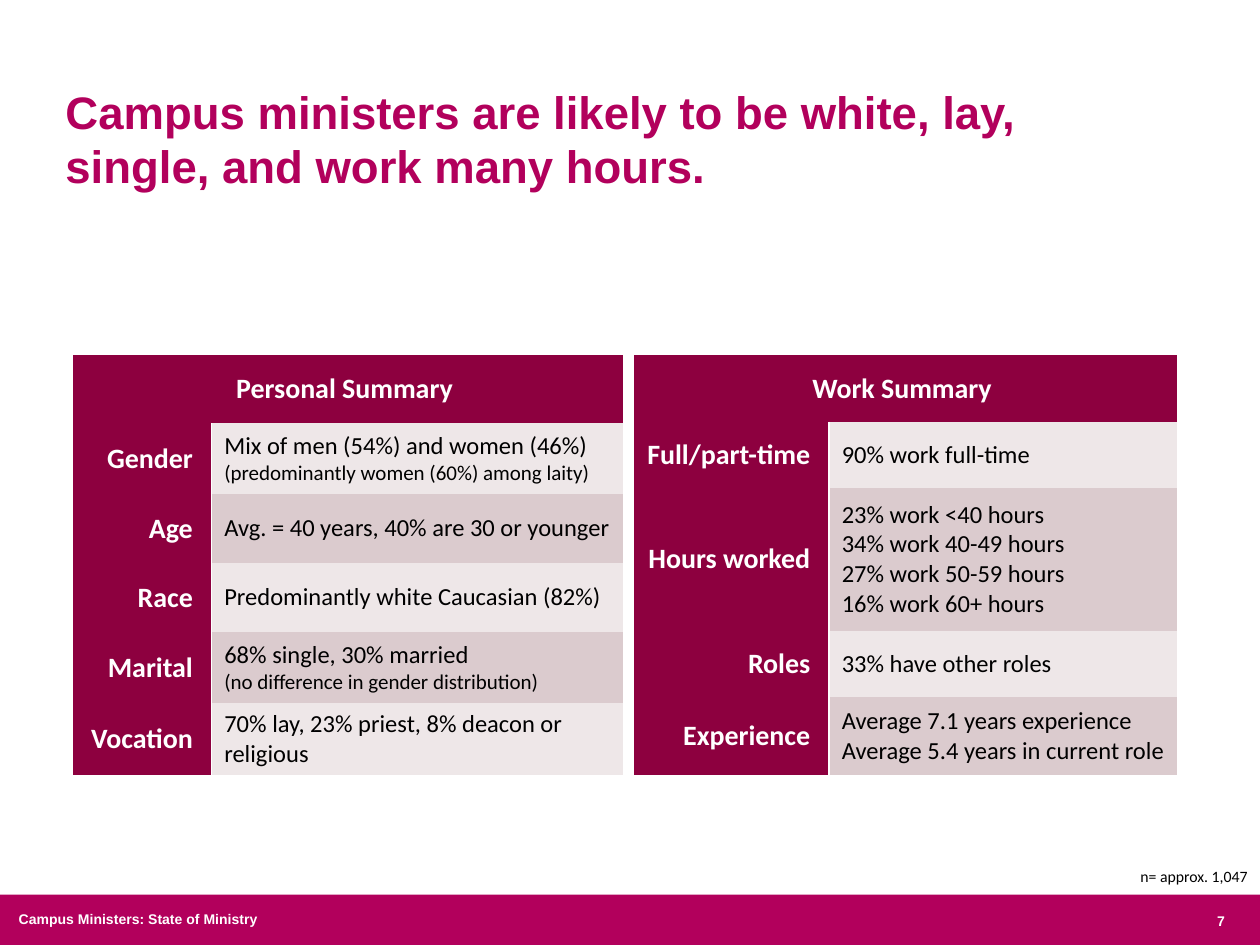
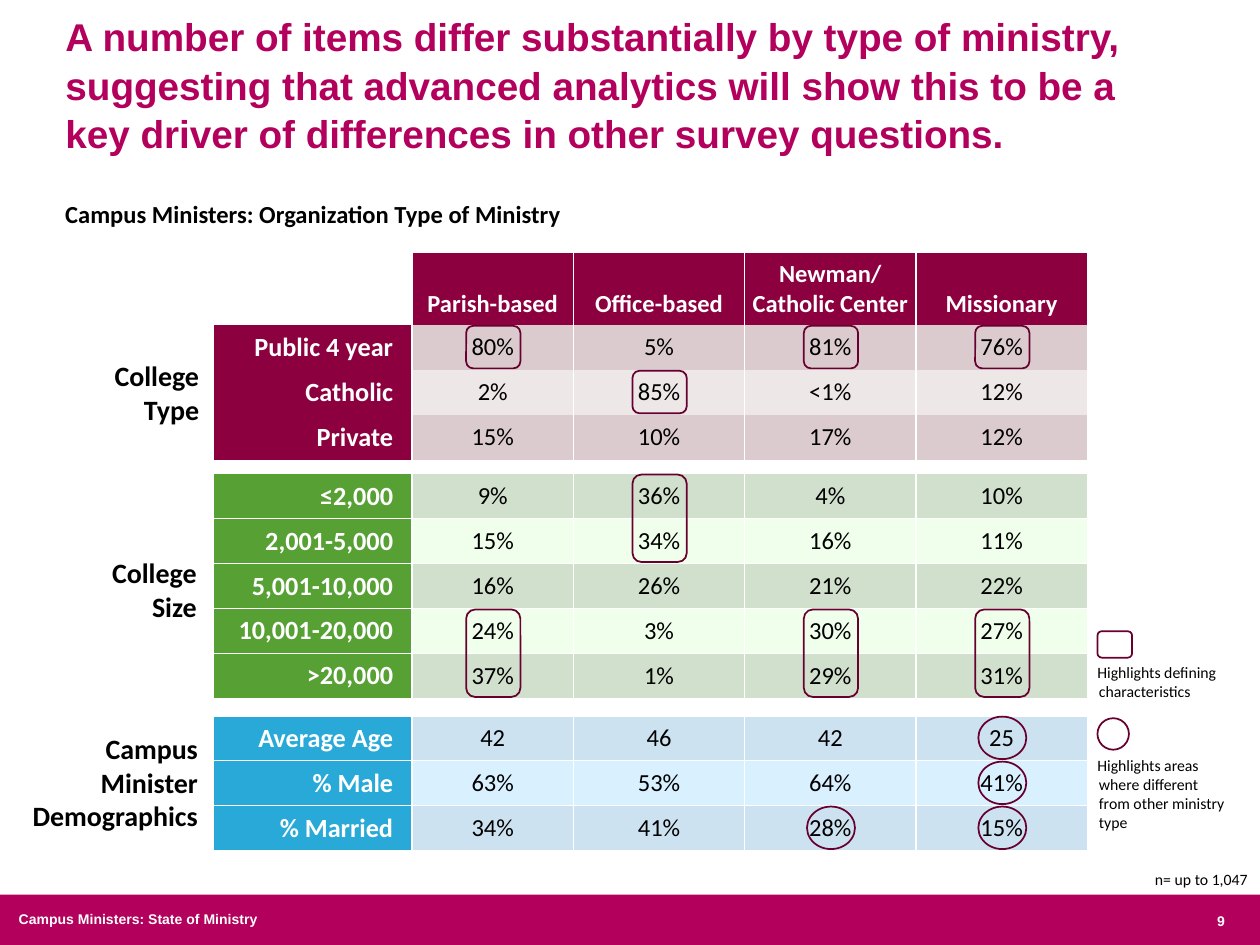
from pptx import Presentation
from pptx.dml.color import RGBColor as RGB
from pptx.enum.shapes import MSO_SHAPE as Kind
from pptx.enum.text import MSO_ANCHOR as Anchor, MSO_AUTO_SIZE as Auto, PP_ALIGN as Align
from pptx.oxml import parse_xml
from pptx.oxml.ns import nsdecls, qn
from pptx.util import Pt

WHITE = RGB(0xFF, 0xFF, 0xFF)
BLACK = RGB(0x00, 0x00, 0x00)
PINK = RGB(0xB2, 0x00, 0x5C)
WINE = RGB(0x8D, 0x00, 0x3F)
PLUM = RGB(0x68, 0x00, 0x2F)
ROSE = RGB(0xDB, 0xCB, 0xCE)
PALE = RGB(0xEE, 0xE7, 0xE8)
GREEN = RGB(0x57, 0xA0, 0x34)
SAGE = RGB(0xD1, 0xDF, 0xCD)
MINT = RGB(0xEF, 0xFF, 0xEB)
BLUE = RGB(0x28, 0xA9, 0xD7)
SKY = RGB(0xCD, 0xE2, 0xF0)
ICE = RGB(0xD9, 0xF0, 0xFF)

BARE = "{2D5ABB26-0587-4C30-8999-92F81FD0307C}"
TITLE = {"name": "Arial", "size": Pt(26), "bold": True}
FOOT = {"name": "Arial", "size": Pt(8), "bold": True}
HEAD = {"name": "Calibri", "size": Pt(16), "bold": True}
SUB = HEAD | {"size": Pt(14)}
LABEL = HEAD | {"size": Pt(15)}
BODY = {"name": "Calibri", "size": Pt(14), "bold": False}
SMALL = BODY | {"size": Pt(12)}
NOTE = BODY | {"size": Pt(9)}
TIGHT = {"margin_left": Pt(3.6), "margin_right": Pt(3.6)}
FLUSH = {"margin_left": 0, "margin_right": 0}
INSET = {"margin_right": Pt(10.8)}

LEFT = 121.7
WIDTHS = (113.8, 92.2, 97.9, 97.9, 97.9)
STEP = 25.7
TOPS = {"type": 144.7, "size": 270.7, "demo": 409}
HIGH = 41

PERSON = (
    ("Gender", "Mix of men (54%) and women (46%)", "(predominantly women (60%) among laity)"),
    ("Age", "Avg. = 40 years, 40% are 30 or younger"),
    ("Race", "Predominantly white Caucasian (82%)"),
    ("Marital", "68% single, 30% married", "(no difference in gender distribution)"),
    ("Vocation", "70% lay, 23% priest, 8% deacon or religious"),
)
WORK = (
    ("Full/part-time", "90% work full-time"),
    ("Hours worked", "23% work <40 hours", "34% work 40-49 hours",
     "27% work 50-59 hours", "16% work 60+ hours"),
    ("Roles", "33% have other roles"),
    ("Experience", "Average 7.1 years experience", "Average 5.4 years in current role"),
)
KINDS = ("Parish-based", "Office-based", "Newman/ Catholic Center", "Missionary")
TYPES = (
    ("Public 4 year", "80%", "5%", "81%", "76%"),
    ("Catholic", "2%", "85%", "<1%", "12%"),
    ("Private", "15%", "10%", "17%", "12%"),
)
SIZES = (
    ("≤2,000", "9%", "36%", "4%", "10%"),
    ("2,001-5,000", "15%", "34%", "16%", "11%"),
    ("5,001-10,000", "16%", "26%", "21%", "22%"),
    ("10,001-20,000", "24%", "3%", "30%", "27%"),
    (">20,000", "37%", "1%", "29%", "31%"),
)
DEMOS = (
    ("Average Age", "42", "46", "42", "25"),
    ("% Male", "63%", "53%", "64%", "41%"),
    ("% Married", "34%", "41%", "28%", "15%"),
)


def apply(item, form):
    for name, value in form.items():
        setattr(item, name, value)


def paint(par, text, form, color, align=Align.LEFT):
    par.text = text
    par.alignment = align
    apply(par.font, form)
    par.font.color.rgb = color


def place(item, box):
    apply(item, dict(zip(("left", "top", "width", "height"), map(Pt, box))))


def write(slide, box, text, form, color=BLACK, align=Align.LEFT, frame={}, hang=0):
    area = slide.shapes.add_textbox(*map(Pt, box)).text_frame
    apply(area, {"word_wrap": True} | frame)
    par = area.paragraphs[0]
    if hang:
        props = par._p.get_or_add_pPr()
        props.set("marL", str(Pt(hang)))
        props.set("indent", str(-Pt(hang)))
    paint(par, text, form, color, align)


def draw(slide, kind, box, fill=None, line=None):
    shape = slide.shapes.add_shape(kind, *map(Pt, box))
    shape.shadow.inherit = False
    if fill:
        shape.fill.solid()
        shape.fill.fore_color.rgb = fill
    else:
        shape.fill.background()
    if line:
        shape.line.color.rgb = line
        shape.line.width = Pt(1)
    else:
        shape.line.fill.background()


def start(deck, number, title, top, form, note, low):
    slide = deck.slides.add_slide(deck.slide_layouts[5])
    draw(slide, Kind.RECTANGLE, (0, 511.2, 720, 28.8), fill=PINK)
    write(slide, (423.4, 517.7, 283.7, 17.3), number, FOOT, WHITE, Align.RIGHT)
    write(slide, (3.6, 517, 283.7, 17.3), "Campus Ministers: State of Ministry", FOOT, WHITE)
    write(slide, (640.8, low, 79.2, 18), note, NOTE, align=Align.RIGHT)
    head = slide.shapes.title
    place(head, (30.2, top, 636.5, 85))
    apply(head.text_frame, {"word_wrap": True, "auto_size": Auto.NONE,
                            "vertical_anchor": Anchor.BOTTOM})
    paint(head.text_frame.paragraphs[0], title, form, PINK)
    return slide


def edge(cell, sides):
    props = cell._tc.get_or_add_tcPr()
    for side in sides:
        props.append(parse_xml(
            f'<a:ln{side} {nsdecls("a")} w="{Pt(1)}"><a:solidFill>'
            f'<a:srgbClr val="{WHITE}"/></a:solidFill></a:ln{side}>'))


def fill_cell(cell, lines, form, ink, fill, align, sides="LR", frame={}):
    edge(cell, sides)
    cell.fill.solid()
    cell.fill.fore_color.rgb = fill
    apply(cell, {"vertical_anchor": Anchor.MIDDLE} | frame)
    area = cell.text_frame
    for i, text in enumerate(lines):
        par = area.add_paragraph() if i else area.paragraphs[0]
        paint(par, text, SMALL if text.startswith("(") else form, ink, align)


def add_grid(slide, left, top, widths, heights):
    frame = slide.shapes.add_table(len(heights), len(widths), Pt(left), Pt(top),
                                   Pt(sum(widths)), Pt(sum(heights)))
    table = frame.table
    apply(table, {"first_row": False, "horz_banding": False})
    table._tbl.tblPr.find(qn("a:tableStyleId")).text = BARE
    for col, width in zip(table.columns, widths):
        col.width = Pt(width)
    for row, height in zip(table.rows, heights):
        row.height = Pt(height)
    return table


def add_facts(slide, left, widths, heights, title, facts):
    table = add_grid(slide, left, 203, widths, heights)
    table.cell(0, 0).merge(table.cell(0, 1))
    fill_cell(table.cell(0, 0), [title], HEAD, WHITE, WINE, Align.CENTER, frame=INSET)
    for i, (label, *lines) in enumerate(facts, 1):
        fill_cell(table.cell(i, 0), [label], HEAD, WHITE, WINE, Align.RIGHT, frame=INSET)
        fill_cell(table.cell(i, 1), lines, BODY, BLACK, PALE if i % 2 else ROSE, Align.LEFT)


def add_rates(slide, top, rates, main, tints, sides="LRTB", heads=()):
    first = [HIGH] if heads else []
    table = add_grid(slide, LEFT, top, WIDTHS, first + [STEP] * len(rates))
    if heads:
        fill_cell(table.cell(0, 0), [], SUB, WHITE, WHITE, Align.CENTER)
    for j, text in enumerate(heads, 1):
        frame = {"vertical_anchor": Anchor.BOTTOM}
        if " " in text:
            frame |= TIGHT
        fill_cell(table.cell(0, j), [text], SUB, WHITE, main, Align.CENTER, frame=frame)
    for i, (label, *values) in enumerate(rates):
        row = i + len(first)
        fill_cell(table.cell(row, 0), [label], LABEL, WHITE, main, Align.RIGHT, sides, INSET)
        for j, value in enumerate(values, 1):
            fill_cell(table.cell(row, j), [value], BODY, BLACK, tints[i % 2],
                      Align.CENTER, sides)


def ring(slide, kind, width, top, row, col, span=1):
    mid = LEFT + sum(WIDTHS[:col]) + WIDTHS[col] / 2
    box = (mid - width / 2 + 0.3, top + row * STEP + 0.5, width, span * STEP - 1.4)
    draw(slide, kind, box, line=PLUM)


def add_people(deck):
    slide = start(deck, "7", "Campus ministers are likely to be white, lay, single, "
                  "and work many hours.", 28.8, TITLE, "n= approx. 1,047", 491.8)
    add_facts(slide, 41.2, (79.8, 235.2), (38.7, 40.7, 39.4, 39.4, 40.7, 41),
              "Personal Summary", PERSON)
    add_facts(slide, 361.8, (112, 199), (38, 38, 81.4, 38, 44.6), "Work Summary", WORK)


def add_types(deck):
    slide = start(deck, "9", "A number of items differ substantially by type of ministry, "
                  "suggesting that advanced analytics will show this to be a key driver of "
                  "differences in other survey questions.", 7.9, TITLE | {"size": Pt(22.1)},
                  "n= up to 1,047", 493.2)
    slide.shapes.title.text_frame.paragraphs[0].line_spacing = 1.04
    write(slide, (30.2, 110.2, 620.6, 24.5),
          "Campus Ministers: Organization Type of Ministry", SUB)
    add_rates(slide, TOPS["type"], TYPES, WINE, (ROSE, PALE), "LR", KINDS)
    add_rates(slide, TOPS["size"], SIZES, GREEN, (SAGE, MINT))
    add_rates(slide, TOPS["demo"], DEMOS, BLUE, (SKY, ICE))

    side = TIGHT | {"vertical_anchor": Anchor.MIDDLE}
    for text, box in (
        ("College Type", (43.2, 184.3, 74.2, 80)),
        ("College Size", (41.8, 270.7, 74.2, 131.8)),
        ("Campus Minister Demographics", (5.8, 409, 110.9, 75.6)),
    ):
        write(slide, box, text, HEAD, align=Align.RIGHT, frame=side)

    for row, col in ((0, 1), (1, 2), (0, 3), (0, 4)):
        ring(slide, Kind.ROUNDED_RECTANGLE, 31, TOPS["type"] + HIGH, row, col)
    for row, col in ((0, 2), (3, 1), (3, 3), (3, 4)):
        ring(slide, Kind.ROUNDED_RECTANGLE, 31, TOPS["size"], row, col, 2)
    for row, col in ((0, 4), (1, 4), (2, 4), (2, 3)):
        ring(slide, Kind.OVAL, 27.4, TOPS["demo"], row, col)

    for kind, box, text, top, height in (
        (Kind.ROUNDED_RECTANGLE, (627.1, 360.7, 19.8, 15.1),
         "Highlights defining characteristics", 375.1, 28.8),
        (Kind.OVAL, (627.1, 410.4, 18, 18),
         "Highlights areas where different from other ministry type", 428.4, 51.1),
    ):
        draw(slide, kind, box, line=PLUM)
        write(slide, (627.1, top, 74.2, height), text, NOTE, frame=FLUSH, hang=0.9)


def main():
    deck = Presentation()
    apply(deck, {"slide_width": Pt(720), "slide_height": Pt(540)})
    add_people(deck)
    add_types(deck)
    deck.save("out.pptx")


if __name__ == "__main__":
    main()
